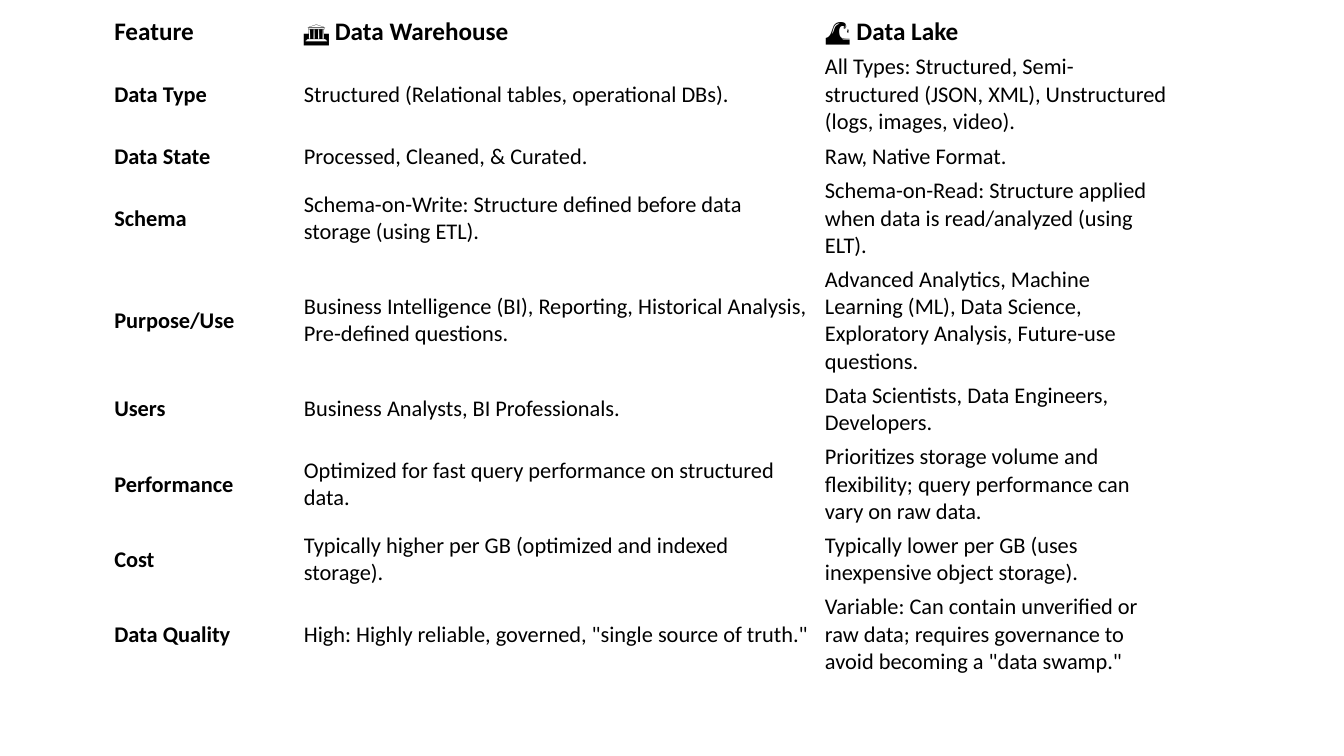
from pptx import Presentation
from pptx.dml.color import RGBColor
from pptx.enum.text import MSO_ANCHOR, PP_ALIGN
from pptx.util import Cm, Pt

FONT = "Calibri"
TEXT_COLOUR = "000000"
COLUMN_WIDTHS = (4.78, 13.13, 8.97)
LINE_HEIGHT = 0.66
ROW_PADDING = 0.23

# Each row: lines in its tallest cell, then feature, warehouse and lake texts
COMPARISON = [
    (1, "Feature", "🏛️ Data Warehouse", "🌊 Data Lake"),
    (3, "Data Type", "Structured (Relational tables, operational DBs).",
     "All Types: Structured, Semi-structured (JSON, XML), Unstructured (logs, images, video)."),
    (1, "Data State", "Processed, Cleaned, & Curated.", "Raw, Native Format."),
    (3, "Schema", "Schema-on-Write: Structure defined before data storage (using ETL).",
     "Schema-on-Read: Structure applied when data is read/analyzed (using ELT)."),
    (4, "Purpose/Use",
     "Business Intelligence (BI), Reporting, Historical Analysis, Pre-defined questions.",
     "Advanced Analytics, Machine Learning (ML), Data Science, Exploratory Analysis, "
     "Future-use questions."),
    (2, "Users", "Business Analysts, BI Professionals.",
     "Data Scientists, Data Engineers, Developers."),
    (3, "Performance", "Optimized for fast query performance on structured data.",
     "Prioritizes storage volume and flexibility; query performance can vary on raw data."),
    (2, "Cost", "Typically higher per GB (optimized and indexed storage).",
     "Typically lower per GB (uses inexpensive object storage)."),
    (3, "Data Quality", 'High: Highly reliable, governed, "single source of truth."',
     "Variable: Can contain unverified or raw data; requires governance to avoid "
     'becoming a "data swamp."'),
]


def colour(hex_string):
    return RGBColor.from_string(hex_string)


def fill_cell(cell, text, size, bold):
    cell.fill.background()
    cell.vertical_anchor = MSO_ANCHOR.MIDDLE
    cell.margin_left = cell.margin_right = Cm(0.16)
    cell.margin_top = cell.margin_bottom = Cm(0.08)
    cell.text_frame.text = text
    paragraph = cell.text_frame.paragraphs[0]
    paragraph.alignment = PP_ALIGN.LEFT
    font = paragraph.runs[0].font
    font.name = FONT
    font.size = Pt(size)
    font.bold = bold
    font.color.rgb = colour(TEXT_COLOUR)


def add_comparison_table(slide, left, top):
    """Place the table at left, top (cm); row heights follow their line counts."""
    heights = [ROW_PADDING + LINE_HEIGHT * row[0] for row in COMPARISON]
    table = slide.shapes.add_table(
        len(COMPARISON), len(COLUMN_WIDTHS), Cm(left), Cm(top),
        Cm(sum(COLUMN_WIDTHS)), Cm(sum(heights))).table
    table.first_row = table.horz_banding = False
    for column, width in zip(table.columns, COLUMN_WIDTHS):
        column.width = Cm(width)
    for row_index, (lines, *texts) in enumerate(COMPARISON):
        table.rows[row_index].height = Cm(heights[row_index])
        is_header = row_index == 0
        for column_index, text in enumerate(texts):
            fill_cell(table.cell(row_index, column_index), text,
                      size=18 if is_header else 16,
                      bold=is_header or column_index == 0)


def main():
    presentation = Presentation()
    presentation.slide_width = Cm(33.87)
    presentation.slide_height = Cm(19.05)
    slide = presentation.slides.add_slide(presentation.slide_layouts[6])
    add_comparison_table(slide, left=2.72, top=0.33)
    presentation.save("out.pptx")


if __name__ == "__main__":
    main()
